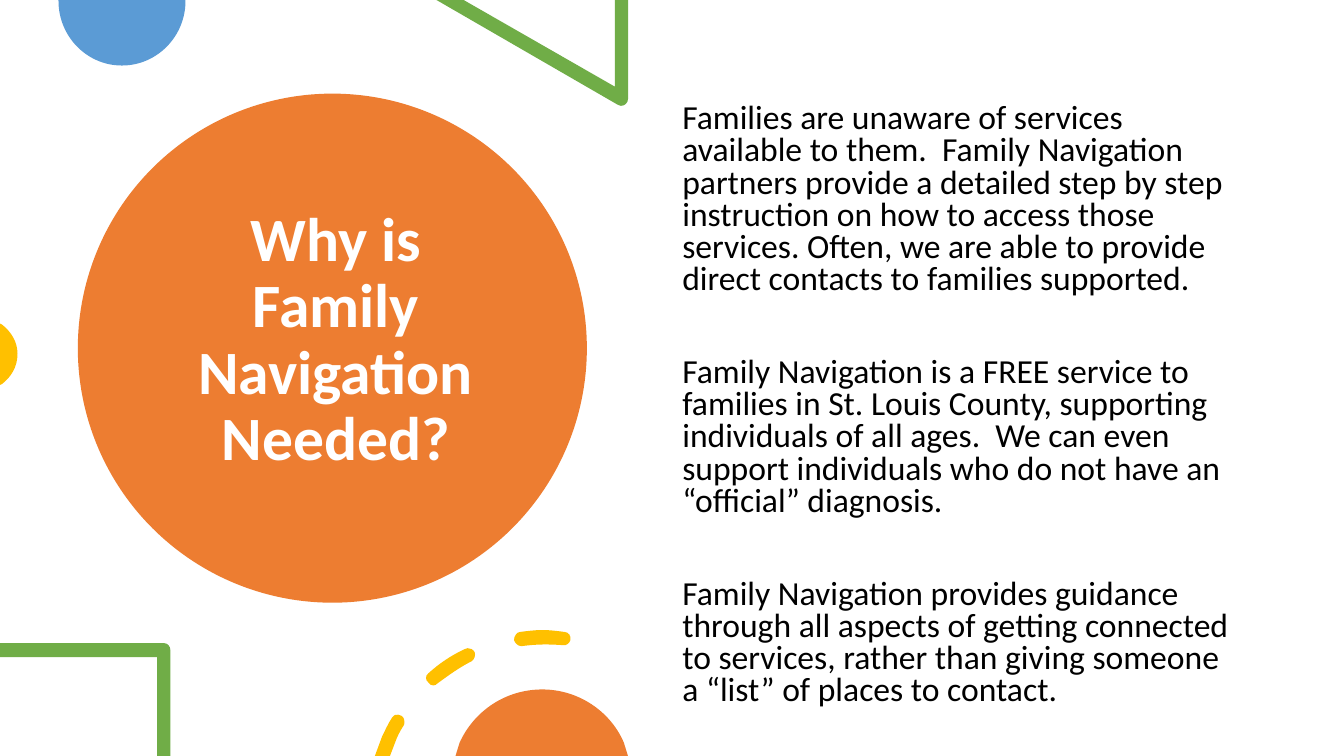
"""Build the slide explaining why family navigation is needed."""
from lxml import etree
from pptx import Presentation
from pptx.dml.color import RGBColor
from pptx.enum.shapes import MSO_SHAPE
from pptx.enum.text import MSO_ANCHOR, MSO_AUTO_SIZE, PP_ALIGN
from pptx.oxml.ns import qn
from pptx.util import Pt

OVAL = MSO_SHAPE.OVAL
TOP, MIDDLE = MSO_ANCHOR.TOP, MSO_ANCHOR.MIDDLE
NO_FIT = MSO_AUTO_SIZE.NONE
LEFT, CENTER = PP_ALIGN.LEFT, PP_ALIGN.CENTER
ORANGE = RGBColor(0xED, 0x7D, 0x31)
BLUE = RGBColor(0x5B, 0x9B, 0xD5)
GREEN = RGBColor(0x70, 0xAD, 0x47)
YELLOW = RGBColor(0xFF, 0xC0, 0x00)
WHITE = RGBColor(0xFF, 0xFF, 0xFF)
BLACK = RGBColor(0x00, 0x00, 0x00)

BLUE_DISC = [
    (132.5, 0), (41.8, 0), (41.8, 0.7),
    (41.8, 25.9, 61.9, 46.8, 87.1, 46.8), (112.3, 46.8, 132.5, 25.9, 132.5, 0.7),
]
GREEN_TRIANGLE = [
    (448.6, 0), (439.2, 0), (439.2, 61.9), (331.2, 0), (311.8, 0), (441.4, 74.9),
    (442.1, 75.6, 442.8, 75.6, 443.5, 75.6), (446.4, 75.6, 448.6, 73.4, 448.6, 70.6),
]
YELLOW_DISC = [
    (0, 231.1), (0, 275), (1.4, 274.3),
    (7.9, 269.3, 12.5, 262.1, 12.5, 252.7), (12.5, 244.1, 7.9, 236.9, 1.4, 231.8),
]
GREEN_CORNER = [
    (117.4, 459.4), (0, 459.4), (0, 469.4), (112.3, 469.4), (112.3, 540),
    (121.7, 540), (121.7, 464.4), (121.7, 461.5, 119.5, 459.4, 117.4, 459.4),
]
LOWER_DASH = [
    (284.4, 510.5), (283, 509.8, 280.8, 511.2, 280.1, 512.6),
    (277.2, 517, 275, 522, 272.9, 526.3), (267.8, 540), (278.6, 540), (282.2, 530.6),
    (283.7, 526.3, 285.8, 522, 288.7, 517.7), (289.4, 515.5, 288.7, 512, 286.6, 511.2),
    (285.8, 510.5, 285.1, 510.5, 284.4, 510.5),
]
MIDDLE_DASH = [
    (334.1, 463), (333.4, 463, 332.6, 463, 331.9, 463.7),
    (322.6, 468, 313.9, 473.8, 306, 481), (303.8, 482.4, 303.8, 486, 306, 487.4),
    (306.7, 488.9, 308.2, 489.6, 309.6, 489.6), (311, 489.6, 311.8, 488.9, 312.5, 488.2),
    (320.4, 482.4, 328.3, 476.6, 337, 472.3), (339.1, 470.9, 339.8, 468, 339.1, 465.8),
    (337.7, 463.7, 336.2, 463, 334.1, 463),
]
UPPER_DASH = [
    (387.4, 450), (382.3, 450, 377.3, 450.7, 371.5, 451.4),
    (369.4, 451.4, 367.2, 454.3, 367.2, 457.2), (367.9, 459.4, 370.1, 461.5, 372.2, 461.5),
    (373, 461.5, 373, 461.5, 373, 461.5), (383, 460.1, 392.4, 460.1, 401.8, 460.8),
    (404.6, 461.5, 406.8, 459.4, 407.5, 457.2), (408.2, 454.3, 406.1, 451.4, 403.2, 451.4),
    (403.2, 451.4, 403.2, 451.4, 403.2, 451.4), (398.2, 450.7, 392.4, 450, 387.4, 450),
]
ORANGE_DISC = [
    (387.4, 492.5), (360.7, 492.5, 338.4, 508.3, 328.3, 530.6), (325.4, 540),
    (448.6, 540), (445.7, 530.6), (436.3, 508.3, 413.3, 492.5, 387.4, 492.5),
]
DECORATIONS = [
    (BLUE, [BLUE_DISC]),
    (GREEN, [GREEN_TRIANGLE]),
    (YELLOW, [YELLOW_DISC]),
    (GREEN, [GREEN_CORNER]),
    (YELLOW, [LOWER_DASH, MIDDLE_DASH, UPPER_DASH]),
    (ORANGE, [ORANGE_DISC]),
]
REASONS = [
    "Families are unaware of services available to them.  Family Navigation partners "
    "provide a detailed step by step instruction on how to access those services. "
    "Often, we are able to provide direct contacts to families supported.",
    "Family Navigation is a FREE service to families in St. Louis County, supporting "
    "individuals of all ages.  We can even support individuals who do not have an "
    "“official” diagnosis.",
    "Family Navigation provides guidance through all aspects of getting connected to "
    "services, rather than giving someone a “list” of places to contact.",
]


def paint(shape, color):
    """Give the shape a plain fill without line or shadow."""
    shape.shadow.inherit = False
    shape.fill.solid()
    shape.fill.fore_color.rgb = color
    shape.line.fill.background()


def draw_outlines(slide, outlines):
    """Add one freeform, turning each six-number segment into a cubic curve."""
    builder = slide.shapes.build_freeform(Pt(outlines[0][0][0]), Pt(outlines[0][0][1]), scale=1.0)
    for index, outline in enumerate(outlines):
        ends = [(Pt(segment[-2]), Pt(segment[-1])) for segment in outline]
        if index:
            builder.move_to(*ends[0])
        builder.add_line_segments(ends[1:], close=False)
        builder.add_line_segments([], close=True)
    shape = builder.convert_to_shape()
    segments = [segment for outline in outlines for segment in outline[1:]]
    lines = list(shape._element.iter(qn("a:lnTo")))
    for line, segment in zip(lines, segments):
        if len(segment) == 6:
            curve = etree.Element(qn("a:cubicBezTo"))
            for x, y in zip(segment[::2], segment[1::2]):
                point = etree.SubElement(curve, qn("a:pt"))
                point.set("x", str(Pt(x) - shape.left))
                point.set("y", str(Pt(y) - shape.top))
            line.getparent().replace(line, curve)
    return shape


presentation = Presentation()
presentation.slide_width, presentation.slide_height = Pt(960), Pt(540)
slide = presentation.slides.add_slide(presentation.slide_layouts[1])
title, body = slide.placeholders

circle = slide.shapes.add_shape(OVAL, Pt(55.6), Pt(66.9), Pt(363.6), Pt(363.6))
paint(circle, ORANGE)
title._element.addprevious(circle._element)

for color, outlines in DECORATIONS:
    paint(draw_outlines(slide, outlines), color)

PLACEHOLDERS = [
    (title, ["Why is Family Navigation Needed?"],
     {"left": Pt(112.4), "top": Pt(83.5), "width": Pt(254.9), "height": Pt(320.4)},
     {"vertical_anchor": MIDDLE, "margin_top": Pt(3.6)},
     {"alignment": CENTER, "line_spacing": 0.9},
     {"size": Pt(44), "bold": True}, WHITE, 0),
    (body, REASONS,
     {"left": Pt(480.2), "top": Pt(31.7), "width": Pt(414), "height": Pt(473.8)},
     {"vertical_anchor": TOP, "margin_top": Pt(42.4)},
     {"alignment": LEFT, "line_spacing": 0.8},
     {"size": Pt(24), "bold": False}, BLACK, 43.1),
]
for shape, texts, box, frame_format, paragraph_format, font_format, color, gap in PLACEHOLDERS:
    frame = shape.text_frame
    frame.text = "\n".join(texts)
    frame_format.update(word_wrap=True, auto_size=NO_FIT)
    font_format.update(name="Calibri")
    for target, values in ((shape, box), (frame, frame_format)):
        for name, value in values.items():
            setattr(target, name, value)
    for index, paragraph in enumerate(frame.paragraphs):
        paragraph_format.update(space_before=Pt(gap if index else 0), space_after=Pt(0))
        font = paragraph.runs[0].font
        for target, values in ((paragraph, paragraph_format), (font, font_format)):
            for name, value in values.items():
                setattr(target, name, value)
        font.color.rgb = color
        properties = paragraph._p.get_or_add_pPr()
        properties.set("marL", "0")
        properties.set("indent", "0")
        etree.SubElement(properties, qn("a:buNone"))

presentation.save("out.pptx")
